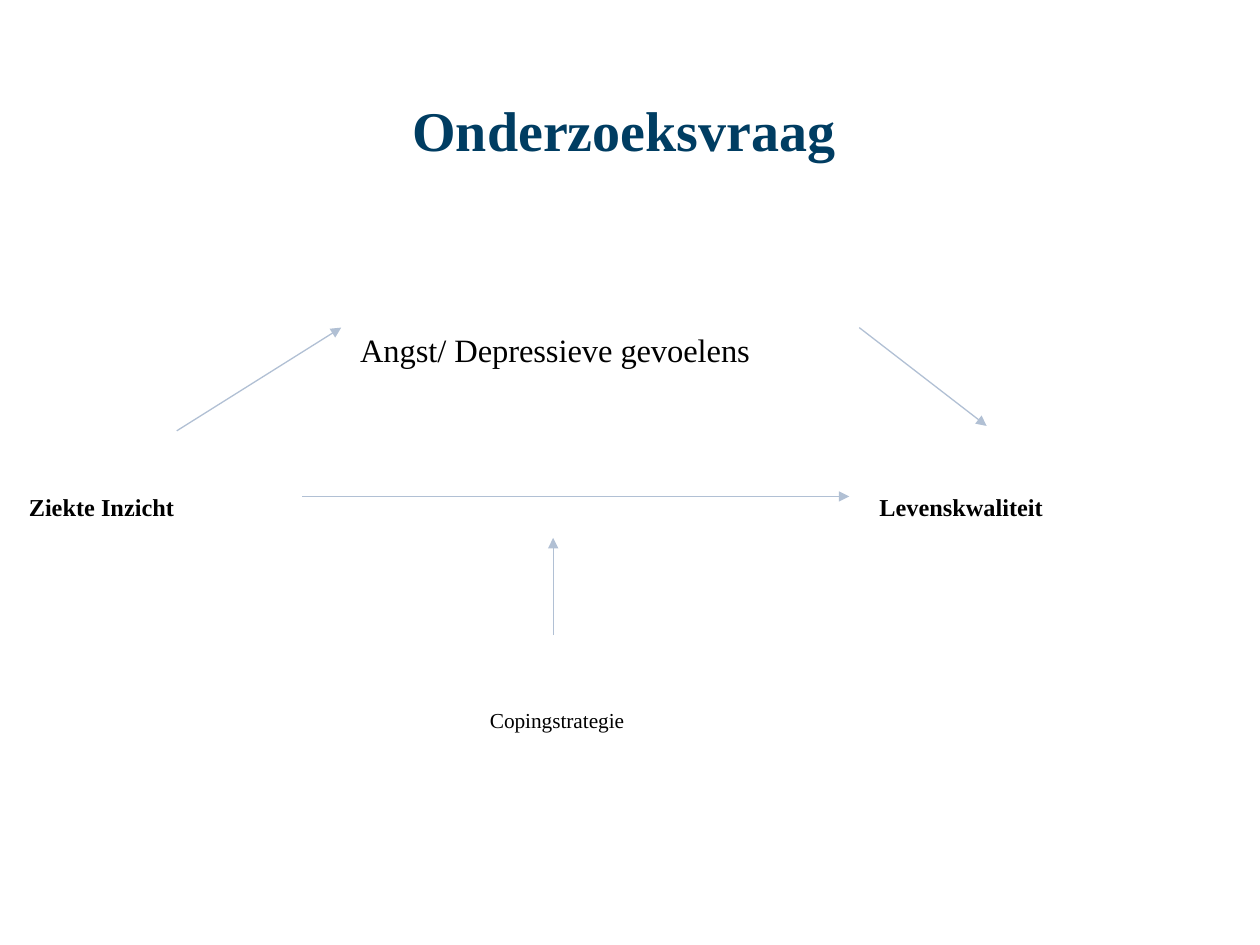
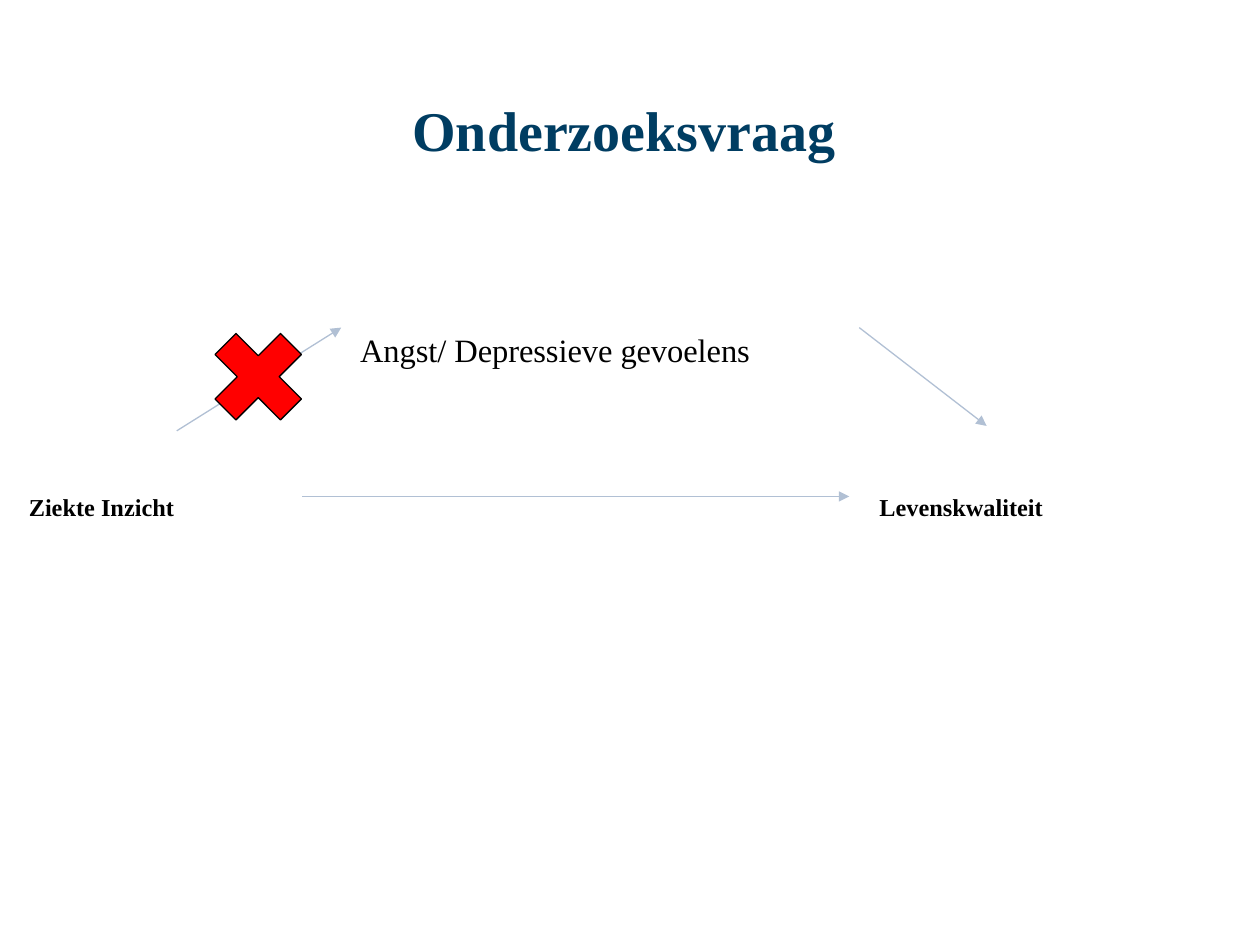
from pptx import Presentation
from pptx.dml.color import RGBColor
from pptx.enum.shapes import MSO_CONNECTOR, MSO_SHAPE
from pptx.enum.text import MSO_ANCHOR, MSO_AUTO_SIZE, PP_ALIGN
from pptx.oxml.ns import qn
from pptx.util import Pt
from lxml.etree import SubElement

COLOURS = {
    "title": "003D62",
    "text": "000000",
    "arrow": "B1C0D4",
    "cross": "FF0000",
    "background": "FFFFFF",
}
FONT = "Times New Roman"
LINE_WIDTH = Pt(0.75)

# text, left, top, width, height, size, bold, wrap
MODEL_LABELS = [
    ("Ziekte Inzicht", 9.4, 261.4, 158.4, 26.6, 24, True, True),
    ("Levenskwaliteit", 495.4, 261.4, 123.1, 26.6, 24, True, False),
    ("Angst/ Depressieve gevoelens", 198.7, 163.4, 274.3, 33.1, 32, False, True),
]
COPING_LABEL = ("Copingstrategie", 272.9, 386.6, 104.4, 24.5, 21, False, False)

# start x, start y, end x, end y
MODEL_ARROWS = [
    (101, 246.2, 195, 187.2),
    (491, 187.2, 563.8, 243.4),
    (172.8, 283.7, 485.3, 283.7),
]
COPING_ARROW = (316.1, 362.9, 316.1, 307.4)


def style_run(span, size, colour, bold):
    span.font.name = FONT
    span.font.size = Pt(size)
    span.font.bold = bold
    span.font.color.rgb = RGBColor.from_string(COLOURS[colour])


deck = Presentation()
deck.slide_width, deck.slide_height = Pt(720), Pt(540)

slides = [
    (MODEL_LABELS + [COPING_LABEL], MODEL_ARROWS + [COPING_ARROW], False),
    (MODEL_LABELS, MODEL_ARROWS, True),
]

for labels, arrows, crossed_out in slides:
    page = deck.slides.add_slide(deck.slide_layouts[5])
    page.background.fill.solid()
    page.background.fill.fore_color.rgb = RGBColor.from_string(COLOURS["background"])

    title = page.shapes.title
    title.left, title.top, title.width, title.height = Pt(51), Pt(40.3), Pt(611.3), Pt(67)
    frame = title.text_frame
    frame.text = "Onderzoeksvraag"
    frame.auto_size = MSO_AUTO_SIZE.NONE
    frame.vertical_anchor = MSO_ANCHOR.MIDDLE
    frame.margin_left = frame.margin_top = frame.margin_right = frame.margin_bottom = 0
    frame.paragraphs[0].alignment = PP_ALIGN.CENTER
    style_run(frame.paragraphs[0].runs[0], 32, "title", True)

    for text, left, top, width, height, size, bold, wrap in labels:
        box = page.shapes.add_textbox(Pt(left), Pt(top), Pt(width), Pt(height))
        frame = box.text_frame
        frame.text = text
        frame.word_wrap = wrap
        frame.auto_size = MSO_AUTO_SIZE.SHAPE_TO_FIT_TEXT
        span = frame.paragraphs[0].runs[0]
        style_run(span, size, "text", bold)
        span._r.get_or_add_rPr().set("baseline", "-25000")

    for points in arrows:
        arrow = page.shapes.add_connector(MSO_CONNECTOR.STRAIGHT, *map(Pt, points))
        arrow.line.color.rgb = RGBColor.from_string(COLOURS["arrow"])
        arrow.line.width = LINE_WIDTH
        SubElement(arrow.line._get_or_add_ln(), qn("a:tailEnd"), type="triangle")
        SubElement(arrow._element.spPr, qn("a:effectLst"))

    if crossed_out:
        cross = page.shapes.add_shape(
            MSO_SHAPE.MATH_MULTIPLY, Pt(111.6), Pt(179.3), Pt(72), Pt(72))
        cross.shadow.inherit = False
        cross.fill.solid()
        cross.fill.fore_color.rgb = RGBColor.from_string(COLOURS["cross"])
        cross.line.color.rgb = RGBColor.from_string(COLOURS["text"])
        cross.line.width = LINE_WIDTH

deck.save("out.pptx")
